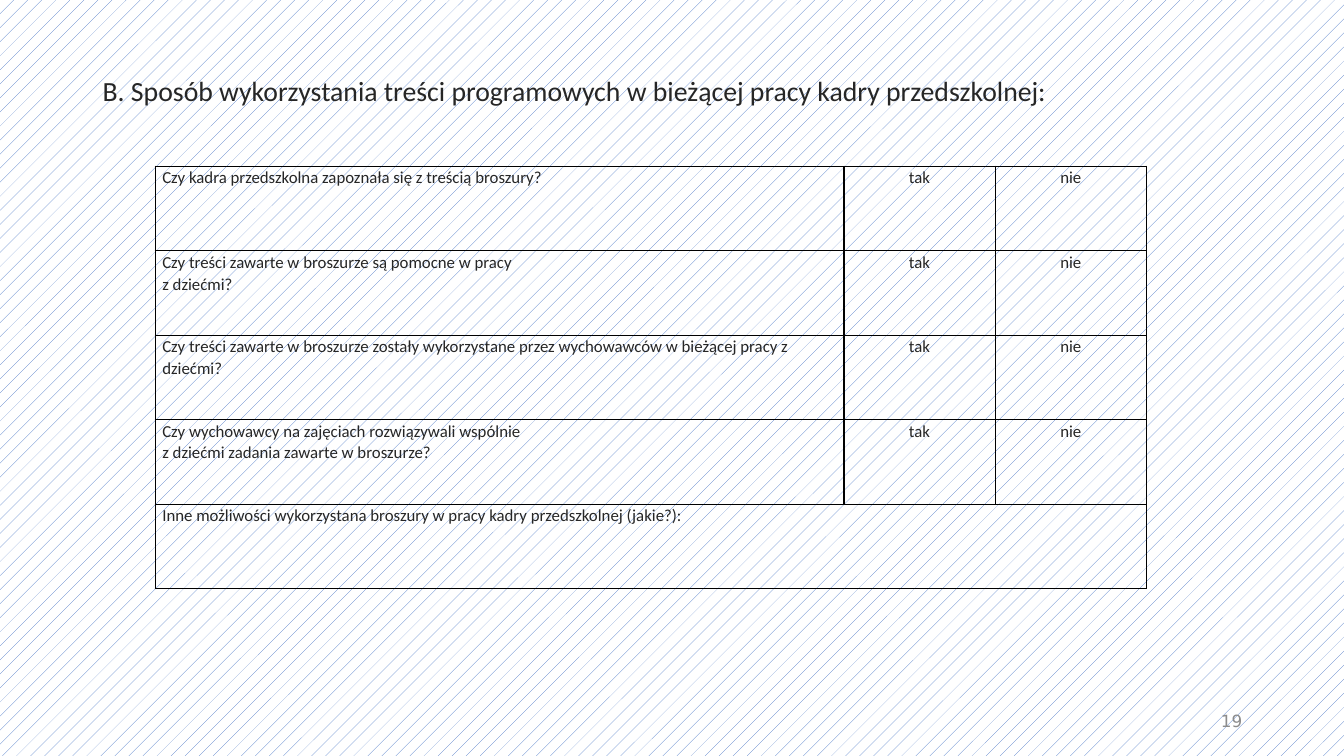
from lxml import etree
from pptx import Presentation
from pptx import util as u
from pptx.dml.color import RGBColor
from pptx.enum import dml, text
from pptx.oxml import ns

COLORS = {"ink": "262626", "border": "000000", "page": "8C8C8C",
          "hatch": "4472C4", "paper": "FFFFFF"}
LEFT, CENTER, RIGHT = text.PP_ALIGN.LEFT, text.PP_ALIGN.CENTER, text.PP_ALIGN.RIGHT
MIDDLE = text.MSO_ANCHOR.MIDDLE

HEADING = "B. Sposób wykorzystania treści programowych w bieżącej pracy kadry przedszkolnej:"
QUESTIONS = [
    "Czy kadra przedszkolna zapoznała się z treścią broszury?",
    "Czy treści zawarte w broszurze są pomocne w pracy \nz dziećmi?",
    "Czy treści zawarte w broszurze zostały wykorzystane przez wychowawców w bieżącej pracy z dziećmi?",
    "Czy wychowawcy na zajęciach rozwiązywali wspólnie \nz dziećmi zadania zawarte w broszurze?",
]
OTHER_USES = "Inne możliwości wykorzystana broszury w pracy kadry przedszkolnej (jakie?):"


class SurveySlide:
    """Holds the style and the current slide, and draws its elements."""

    def __init__(self, slide, font="Calibri"):
        self.slide = slide
        self.font = font

    def color(self, name):
        return RGBColor.from_string(COLORS[name])

    def apply(self, target, values):
        for name, value in values.items():
            setattr(target, name, value)

    def background(self):
        fill = self.slide.background.fill
        fill.patterned()
        fill.pattern = dml.MSO_PATTERN.PERCENT_5
        fill.fore_color.rgb = self.color("hatch")
        fill.back_color.rgb = self.color("paper")

    def wording(self, frame, words, size, align=LEFT, color="ink", font=None, spacing=1.0):
        paragraph = frame.paragraphs[0]
        paragraph.text = words
        self.apply(paragraph, {"alignment": align, "line_spacing": spacing})
        for run in paragraph.runs:
            self.apply(run.font, {"name": font or self.font, "size": u.Pt(size)})
            run.font.color.rgb = self.color(color)

    def label(self, words, box, size, bottom=0.05, **style):
        frame = self.slide.shapes.add_textbox(*map(u.Inches, box)).text_frame
        self.apply(frame, {"word_wrap": True, "vertical_anchor": MIDDLE,
                           "margin_bottom": u.Inches(bottom)})
        self.wording(frame, words, size, **style)

    def cell(self, cell, words="", align=LEFT):
        self.apply(cell, {"margin_left": u.Inches(0.07), "margin_right": u.Inches(0.07),
                          "margin_top": 0, "margin_bottom": 0})
        properties = cell._tc.get_or_add_tcPr()
        for side in ("a:lnL", "a:lnR", "a:lnT", "a:lnB"):
            line = etree.SubElement(properties, ns.qn(side), w=str(u.Pt(1)))
            solid = etree.SubElement(line, ns.qn("a:solidFill"))
            etree.SubElement(solid, ns.qn("a:srgbClr"), val=COLORS["border"])
        cell.fill.background()
        if words:
            self.wording(cell.text_frame, words, 12, align, spacing=1.07)

    def table(self, rows, box, widths):
        table = self.slide.shapes.add_table(len(rows), len(widths), *map(u.Inches, box)).table
        self.apply(table, {"first_row": False, "horz_banding": False})
        for column, width in zip(table.columns, widths):
            column.width = u.Inches(width)
        for r, row in enumerate(rows):
            for c, words in enumerate(row):
                self.cell(table.cell(r, c), words, CENTER if c else LEFT)
        last = len(rows) - 1
        table.cell(last, 0).merge(table.cell(last, len(widths) - 1))


def main():
    deck = Presentation()
    deck.slide_width, deck.slide_height = u.Inches(13.33), u.Inches(7.5)
    survey = SurveySlide(deck.slides.add_slide(deck.slide_layouts[6]))
    survey.background()
    survey.label(HEADING, (0.92, 0.4, 11.5, 1.45), 19.8, bottom=0.5)
    answers = [(question, "tak", "nie") for question in QUESTIONS]
    survey.table(answers + [(OTHER_USES, "", "")], (1.54, 1.65, 9.83, 4.19), (6.83, 1.5, 1.5))
    survey.label("19", (9.42, 6.95, 3, 0.4), 12, align=RIGHT, color="page", font="DejaVu Sans")
    deck.save("out.pptx")


if __name__ == "__main__":
    main()
